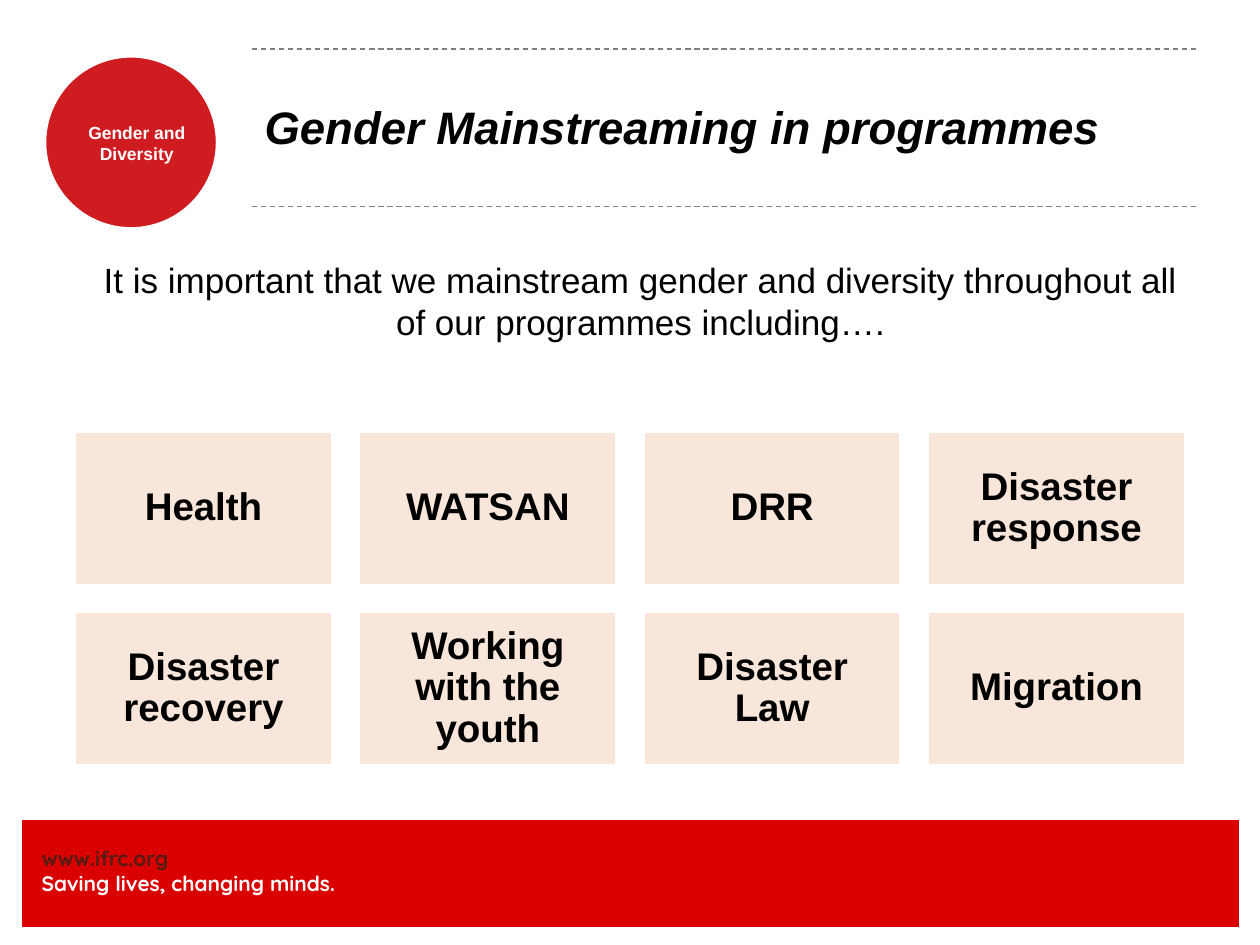
from dataclasses import dataclass

from lxml.etree import SubElement
from pptx import Presentation
from pptx.dml.color import RGBColor
from pptx.enum.dml import MSO_LINE
from pptx.enum.shapes import MSO_CONNECTOR, MSO_SHAPE
from pptx.enum.text import MSO_ANCHOR, MSO_AUTO_SIZE, PP_ALIGN
from pptx.oxml.ns import qn
from pptx.util import Inches, Pt


@dataclass
class Box:
    left: float
    top: float
    width: float
    height: float

    def place(self) -> tuple:
        return tuple(map(Inches, (self.left, self.top, self.width, self.height)))


@dataclass
class Style:
    size: float
    color: str = "000000"
    bold: bool = True
    italic: bool = False
    name: str = "Arial"
    align: PP_ALIGN = PP_ALIGN.CENTER
    space: float = 1.0


TITLE = Style(26, italic=True, align=PP_ALIGN.LEFT)
INTRO = Style(20, bold=False)
CARD = Style(22, space=0.9)
BADGE = Style(10, "FFFFFF")
SITE = Style(12, "551C15", name="Quicksand", align=PP_ALIGN.LEFT)
MOTTO = Style(12, "FFFFFF", name="Quicksand", align=PP_ALIGN.LEFT)

TOPICS = [
    ["Health", "WATSAN", "DRR", "Disaster response"],
    ["Disaster recovery", "Working with the youth", "Disaster Law", "Migration"],
]
LEFT, TOP = 0.59, 3.42
STEP, DROP = 6.77 / 3, 1.43


def paint(hue: str) -> RGBColor:
    return RGBColor.from_string(hue)


def write(shape, lines: list[tuple[str, Style]], inset: float | None = None,
          anchor: MSO_ANCHOR = MSO_ANCHOR.TOP) -> None:
    """Fill a shape with one styled paragraph for each line."""
    frame = shape.text_frame
    form = {"word_wrap": True, "auto_size": MSO_AUTO_SIZE.NONE,
            "vertical_anchor": anchor}
    if inset is not None:
        for side in ("left", "top", "right", "bottom"):
            form[f"margin_{side}"] = Inches(inset)
    for key, value in form.items():
        setattr(frame, key, value)
    for spot, (text, style) in enumerate(lines):
        para = frame.add_paragraph() if spot else frame.paragraphs[0]
        para.alignment = style.align
        para.line_spacing = style.space
        para.space_before = Pt(0)
        run = para.add_run()
        run.text = text
        look = {"size": Pt(style.size), "bold": style.bold,
                "italic": style.italic, "name": style.name}
        for key, value in look.items():
            setattr(run.font, key, value)
        run.font.color.rgb = paint(style.color)


def block(slide, kind: MSO_SHAPE, box: Box, fill: str, edge: float):
    """Add a filled shape with a white outline."""
    shape = slide.shapes.add_shape(kind, *box.place())
    shape.shadow.inherit = False
    shape.fill.solid()
    shape.fill.fore_color.rgb = paint(fill)
    shape.line.color.rgb = paint("FFFFFF")
    shape.line.width = Pt(edge)
    return shape


def label(slide, box: Box, *lines: tuple[str, Style],
          inset: float | None = None) -> None:
    write(slide.shapes.add_textbox(*box.place()), list(lines), inset)


def rule(slide, y: float) -> None:
    """Draw a dashed line across the title area."""
    line = slide.shapes.add_connector(
        MSO_CONNECTOR.STRAIGHT, Inches(2), Inches(y), Inches(9.5), Inches(y))
    line.line.color.rgb = paint("808080")
    line.line.width = Pt(0.75)
    line.line.dash_style = MSO_LINE.DASH
    SubElement(line._element.spPr, qn("a:effectLst"))


def main() -> None:
    deck = Presentation()
    deck.slide_width, deck.slide_height = Inches(10), Inches(7.5)
    slide = deck.slides.add_slide(deck.slide_layouts[5])

    block(slide, MSO_SHAPE.RECTANGLE, Box(0.17, 6.5, 9.67, 0.86), "DB0000", 0.75)
    label(slide, Box(0.33, 6.71, 3.42, 0.4), ("www.ifrc.org", SITE),
          ("Saving lives, changing minds.", MOTTO), inset=0)

    block(slide, MSO_SHAPE.OVAL, Box(0.35, 0.44, 1.38, 1.38), "CF1C21", 2.5)
    label(slide, Box(0.46, 0.97, 1.25, 0.34), ("Gender and Diversity", BADGE), inset=0)

    for y in (0.39, 1.64):
        rule(slide, y)

    title = slide.shapes.title
    title.left, title.top, title.width, title.height = Box(2, 0.38, 7.5, 1.25).place()
    write(title, [("Gender Mainstreaming in programmes", TITLE)],
          anchor=MSO_ANCHOR.MIDDLE)

    label(slide, Box(0.67, 2, 8.83, 1),
          ("It is important that we mainstream gender and diversity throughout "
           "all of our programmes including….", INTRO))

    for row, topics in enumerate(TOPICS):
        for col, topic in enumerate(topics):
            box = Box(LEFT + col * STEP, TOP + row * DROP, 2.05, 1.23)
            card = block(slide, MSO_SHAPE.RECTANGLE, box, "F8E6DA", 2)
            write(card, [(topic, CARD)], 0.09, MSO_ANCHOR.MIDDLE)

    deck.save("out.pptx")


if __name__ == "__main__":
    main()
